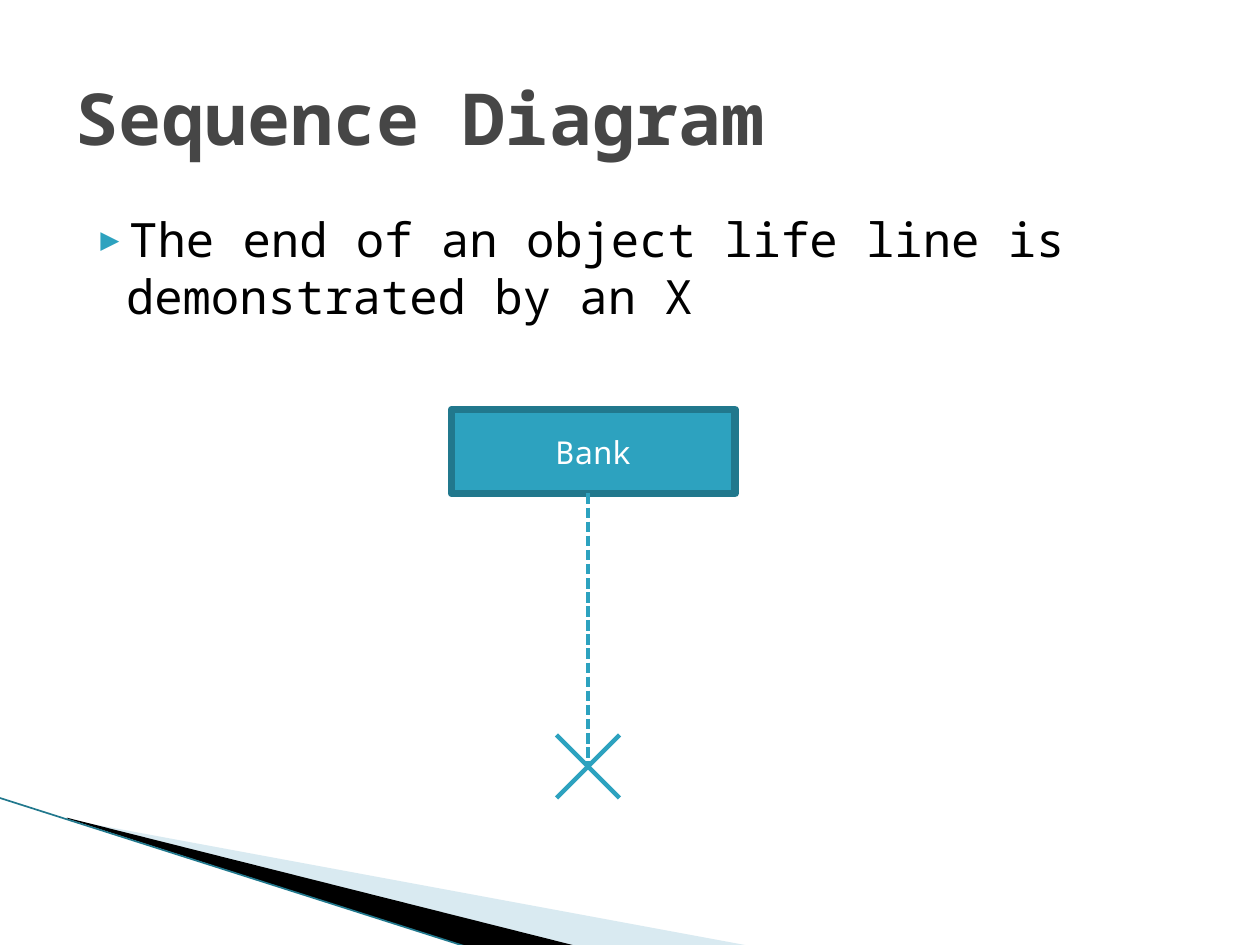
from lxml import etree
from pptx import Presentation
from pptx.dml.color import RGBColor
from pptx.enum.dml import MSO_LINE
from pptx.enum.shapes import MSO_CONNECTOR, MSO_SHAPE
from pptx.enum.text import MSO_ANCHOR, MSO_AUTO_SIZE, PP_ALIGN
from pptx.oxml.ns import qn
from pptx.util import Pt

TEAL = RGBColor(0x2D, 0xA2, 0xBF)
DARK_TEAL = RGBColor(0x21, 0x78, 0x8D)
PALE_BLUE = RGBColor(0xA0, 0xCB, 0xDC)
GRAY = RGBColor(0x46, 0x46, 0x46)
BLACK = RGBColor(0, 0, 0)
WHITE = RGBColor(0xFF, 0xFF, 0xFF)
FONT = "Noto Sans Mono"


def set_text(sp, text, align, anchor, **fmt):
    tf = sp.text_frame
    tf.text = text
    for name, value in dict(word_wrap=True, auto_size=MSO_AUTO_SIZE.NONE,
                            vertical_anchor=anchor).items():
        setattr(tf, name, value)
    p = tf.paragraphs[0]
    p.alignment = align
    p.space_before = Pt(0)
    font = p.runs[0].font
    font.name = FONT
    font.color.rgb = fmt.pop("color")
    for name, value in fmt.items():
        setattr(font, name, value)
    return p


def add_line(x1, y1, x2, y2, color, width):
    c = s.shapes.add_connector(MSO_CONNECTOR.STRAIGHT,
                               Pt(x1), Pt(y1), Pt(x2), Pt(y2))
    c.line.color.rgb = color
    c.line.width = Pt(width)
    etree.SubElement(c.line._get_or_add_ln().getparent(), qn("a:effectLst"))
    return c


prs = Presentation()
prs.slide_width, prs.slide_height = Pt(720), Pt(540)
s = prs.slides.add_slide(prs.slide_layouts[1])
title, body = s.placeholders

wedges = [
    ([(39.6, 468.5), (428.4, 540.5), (328.3, 540.5), (39.6, 468)], PALE_BLUE, 40),
    ([(38.2, 467.3), (329, 540.5), (267.8, 541.4), (38.9, 468)], BLACK, 100),
]
for points, color, opacity in wedges:
    start, *rest = [(Pt(x), Pt(y)) for x, y in points]
    fb = s.shapes.build_freeform(*start)
    fb.add_line_segments(rest)
    sp = fb.convert_to_shape()
    sp.shadow.inherit = False
    sp.line.fill.background()
    sp.fill.solid()
    sp.fill.fore_color.rgb = color
    if opacity < 100:
        clr = sp.fill._xPr.find(".//" + qn("a:srgbClr"))
        etree.SubElement(clr, qn("a:alpha"), val=str(opacity * 1000))
add_line(-0.7, 455.8, 267.8, 541.4, DARK_TEAL, 0.95)

for sp, box in ((title, (36, 21.6, 648, 90)), (body, (36, 116.64, 648, 356.4))):
    sp.left, sp.top, sp.width, sp.height = map(Pt, box)

set_text(title, "Sequence Diagram", PP_ALIGN.LEFT, MSO_ANCHOR.MIDDLE,
         size=Pt(41), bold=True, color=GRAY)
p = set_text(body, "The end of an object life line is demonstrated by an X",
             PP_ALIGN.LEFT, MSO_ANCHOR.TOP, size=Pt(27), color=BLACK)
pPr = p._p.get_or_add_pPr()
pPr.set("marL", str(Pt(28.8)))
pPr.set("indent", str(Pt(-20.16)))
bu_clr = etree.SubElement(pPr, qn("a:buClr"))
etree.SubElement(bu_clr, qn("a:srgbClr"), val=str(TEAL))
etree.SubElement(pPr, qn("a:buSzPct"), val="68000")
etree.SubElement(pPr, qn("a:buFont"), typeface=FONT)
etree.SubElement(pPr, qn("a:buChar"), char="▶")

bank = s.shapes.add_shape(MSO_SHAPE.RECTANGLE, Pt(258), Pt(234), Pt(162), Pt(48))
bank.shadow.inherit = False
bank.fill.solid()
bank.fill.fore_color.rgb = TEAL
bank.line.color.rgb = DARK_TEAL
bank.line.width = Pt(4.33)
set_text(bank, "Bank", PP_ALIGN.CENTER, MSO_ANCHOR.MIDDLE, size=Pt(18), color=WHITE)

END_X, END_Y, ARM = 336, 438, 18
life_line = add_line(END_X, 282, END_X, END_Y, TEAL, 2)
life_line.line.dash_style = MSO_LINE.SQUARE_DOT
for dx in (-ARM, ARM):
    add_line(END_X + dx, END_Y - ARM, END_X - dx, END_Y + ARM, TEAL, 2.5)

prs.save("out.pptx")
